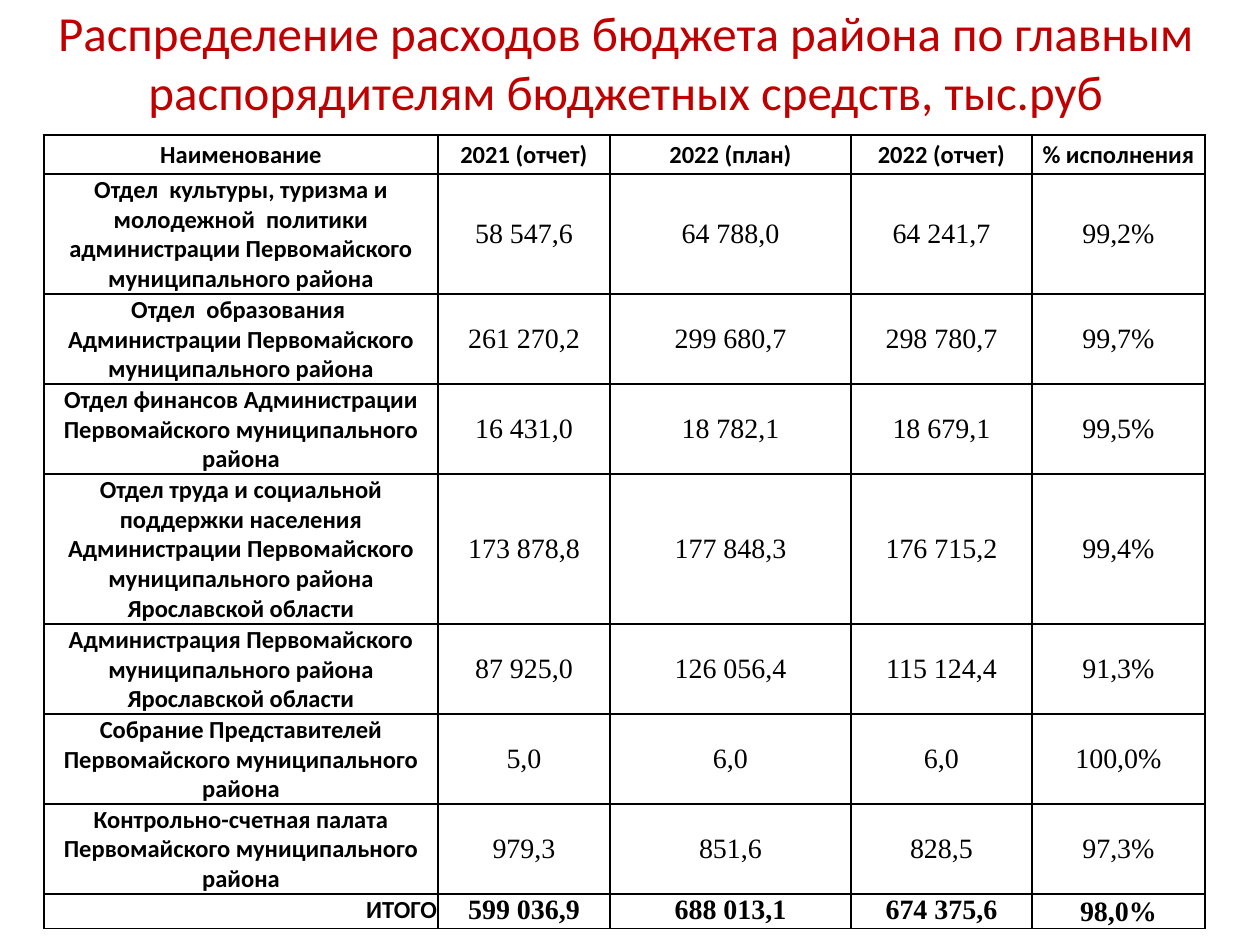
from typing import NamedTuple

from lxml import etree
from pptx import Presentation
from pptx.dml.color import RGBColor
from pptx.enum.text import MSO_ANCHOR, PP_ALIGN
from pptx.oxml.ns import qn
from pptx.util import Emu, Pt

PX = 914400 / 126
RED = RGBColor(0xC0, 0x00, 0x00)
BLACK = RGBColor(0x00, 0x00, 0x00)
WHITE = RGBColor(0xFF, 0xFF, 0xFF)
CENTER, RIGHT = PP_ALIGN.CENTER, PP_ALIGN.RIGHT
TOP, MIDDLE = MSO_ANCHOR.TOP, MSO_ANCHOR.MIDDLE

TITLE = "Распределение расходов бюджета района по главным распорядителям бюджетных средств, тыс.руб"
HEADERS = ("Наименование", "2021 (отчет)", "2022 (план)", "2022 (отчет)", "% исполнения")
COLUMN_WIDTHS = (394, 172, 241, 181, 173)
HEADER_HEIGHT = 39


class Style(NamedTuple):
    font: str
    size: int
    bold: bool
    color: RGBColor = BLACK


class BudgetRow(NamedTuple):
    height: int
    name: str
    figures: tuple[str, ...]


TITLE_STYLE = Style("Calibri", 28, False, RED)
LABEL = Style("Calibri", 14, True)
FIGURE = Style("Times New Roman", 16, False)
TOTAL_FIGURE = Style("Times New Roman", 16, True)

DEPARTMENTS = (
    BudgetRow(120, "Отдел  культуры, туризма и молодежной  политики администрации Первомайского муниципального района",
              ("58 547,6", "64 788,0", "64 241,7", "99,2%")),
    BudgetRow(90, "Отдел  образования  Администрации Первомайского муниципального района",
              ("261 270,2", "299 680,7", "298 780,7", "99,7%")),
    BudgetRow(90, "Отдел финансов Администрации Первомайского муниципального района",
              ("16 431,0", "18 782,1", "18 679,1", "99,5%")),
    BudgetRow(150, "Отдел труда и социальной поддержки населения Администрации Первомайского "
                   "муниципального района Ярославской области",
              ("173 878,8", "177 848,3", "176 715,2", "99,4%")),
    BudgetRow(90, "Администрация Первомайского муниципального района Ярославской области",
              ("87 925,0", "126 056,4", "115 124,4", "91,3%")),
    BudgetRow(90, "Собрание Представителей Первомайского муниципального района",
              ("5,0", "6,0", "6,0", "100,0%")),
    BudgetRow(90, "Контрольно-счетная палата Первомайского муниципального района",
              ("979,3", "851,6", "828,5", "97,3%")),
)
TOTAL = BudgetRow(33, "ИТОГО", ("599 036,9", "688 013,1", "674 375,6", "98,0%"))


def px(length: int) -> Emu:
    return Emu(round(length * PX))


def write(frame, text: str, style: Style, align=CENTER) -> None:
    paragraph = frame.paragraphs[0]
    paragraph.alignment = align
    run = paragraph.add_run()
    run.text = text
    run.font.name = style.font
    run.font.size = Pt(style.size)
    run.font.bold = style.bold
    run.font.color.rgb = style.color


def add_borders(cell) -> None:
    properties = cell._tc.get_or_add_tcPr()
    for position, side in enumerate(("a:lnL", "a:lnR", "a:lnT", "a:lnB")):
        line = etree.Element(qn(side), w=str(Pt(1)))
        fill = etree.SubElement(line, qn("a:solidFill"))
        etree.SubElement(fill, qn("a:srgbClr"), val=str(BLACK))
        properties.insert(position, line)


def fill_cell(cell, text: str, style: Style, align=CENTER, anchor=MIDDLE) -> None:
    cell.fill.solid()
    cell.fill.fore_color.rgb = WHITE
    cell.margin_left = cell.margin_right = cell.margin_top = px(1)
    cell.margin_bottom = 0
    cell.vertical_anchor = anchor
    write(cell.text_frame, text, style, align)
    add_borders(cell)


def add_title(slide) -> None:
    frame = slide.shapes.add_textbox(px(25), px(6), px(1201), px(110)).text_frame
    frame.word_wrap = True
    frame.vertical_anchor = MIDDLE
    write(frame, TITLE, TITLE_STYLE)


def add_budget_table(slide) -> None:
    heights = (HEADER_HEIGHT, *(row.height for row in DEPARTMENTS), TOTAL.height)
    table = slide.shapes.add_table(
        len(heights), len(COLUMN_WIDTHS),
        px(44), px(135), px(sum(COLUMN_WIDTHS)), px(sum(heights)),
    ).table
    table.horz_banding = False
    for column, width in zip(table.columns, COLUMN_WIDTHS):
        column.width = px(width)
    for row, height in zip(table.rows, heights):
        row.height = px(height)

    for column, header in enumerate(HEADERS):
        fill_cell(table.cell(0, column), header, LABEL)
    for index, department in enumerate(DEPARTMENTS, start=1):
        fill_cell(table.cell(index, 0), department.name, LABEL, anchor=MIDDLE if index == 1 else TOP)
        for column, figure in enumerate(department.figures, start=1):
            fill_cell(table.cell(index, column), figure, FIGURE)

    last = len(heights) - 1
    fill_cell(table.cell(last, 0), TOTAL.name, LABEL, RIGHT, TOP)
    for column, figure in enumerate(TOTAL.figures, start=1):
        anchor = MIDDLE if figure.endswith("%") else TOP
        fill_cell(table.cell(last, column), figure, TOTAL_FIGURE, anchor=anchor)


def main() -> None:
    presentation = Presentation()
    presentation.slide_width, presentation.slide_height = px(1260), px(945)
    slide = presentation.slides.add_slide(presentation.slide_layouts[6])
    add_title(slide)
    add_budget_table(slide)
    presentation.save("out.pptx")


if __name__ == "__main__":
    main()
